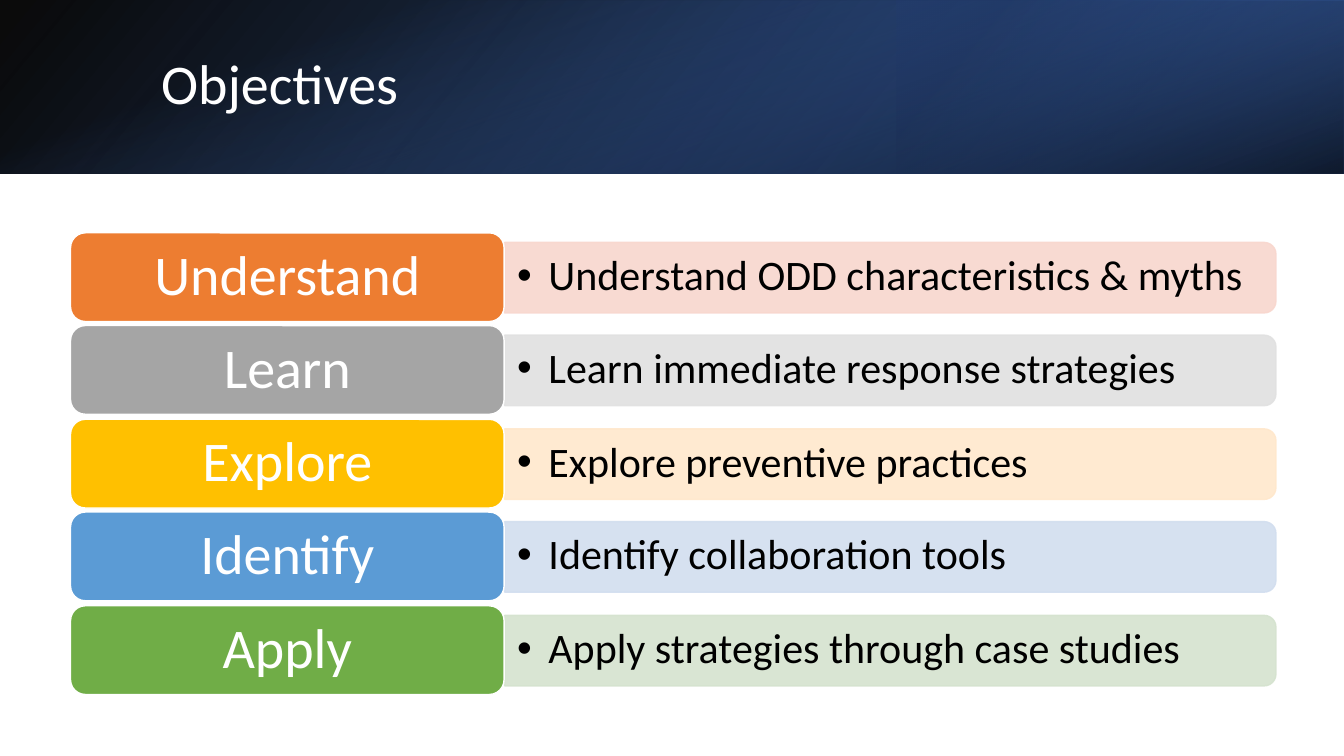
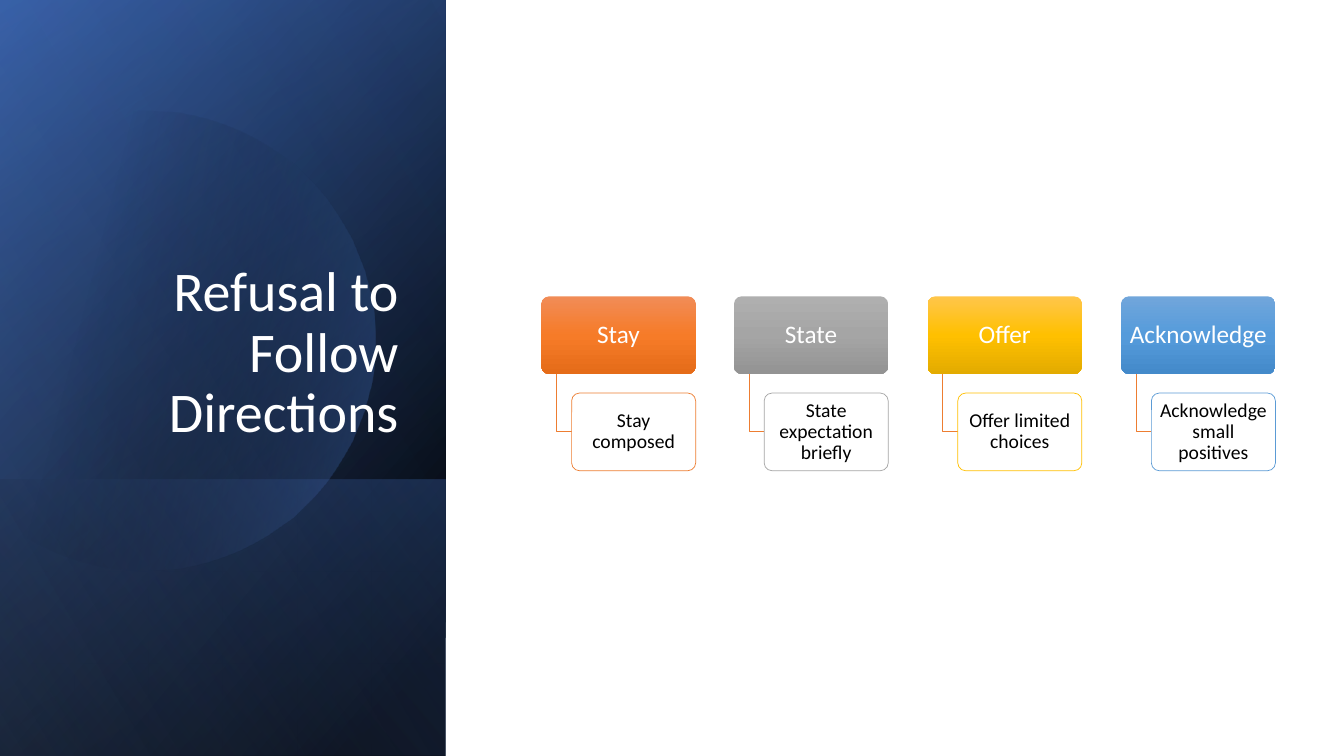
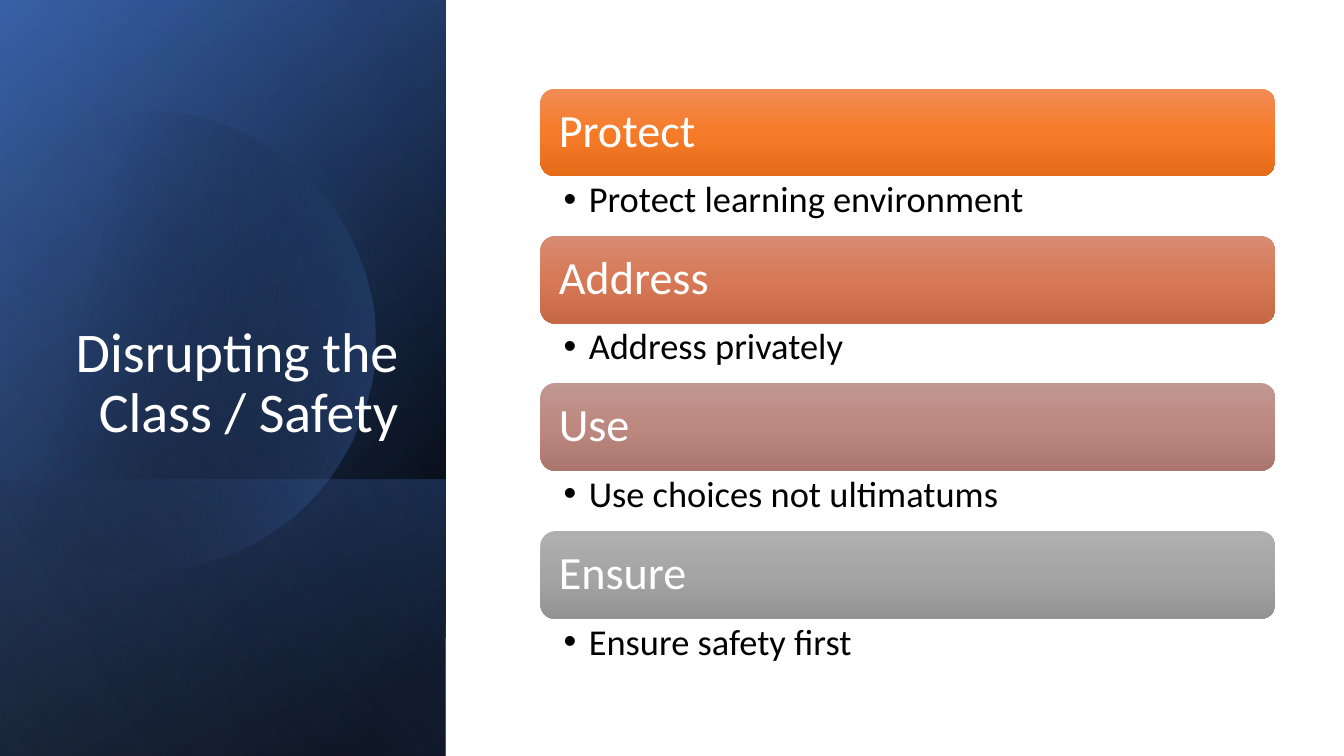
from math import cos, radians, sin

from lxml.etree import SubElement
from pptx import Presentation
from pptx.dml.color import RGBColor
from pptx.enum.shapes import MSO_SHAPE
from pptx.enum.text import MSO_ANCHOR, PP_ALIGN
from pptx.oxml import parse_xml
from pptx.oxml.ns import nsdecls, qn
from pptx.util import Emu, Pt

SCALE = 9144  # EMU in one px, 100 px to the inch
WIDTH, HEIGHT = 1333, 750
BANNER = 172
PANEL = 442

COLORS = {
    "white": "FFFFFF", "black": "000000",
    "navy": "203864", "deep_blue": "2F5597", "royal": "4472C4", "pale_blue": "8FAADC",
    "orange": "ED7D31", "gray": "A5A5A5", "yellow": "FFC000", "blue": "5B9BD5",
    "green": "70AD47",
    "orange_tint": "F8D7CE", "gray_tint": "E1E1E1", "yellow_tint": "FFE8CC",
    "blue_tint": "D2DEEF", "green_tint": "D5E3CF",
    "orange_top": "F18C57", "orange_middle": "F67B28", "orange_bottom": "E56C19",
    "gray_top": "AFAFAF", "gray_middle": "A5A5A5", "gray_bottom": "939393",
    "yellow_top": "FFC64B", "yellow_middle": "FFC000", "yellow_bottom": "E3AB00",
    "blue_top": "71A6DB", "blue_middle": "559BDB", "blue_bottom": "448ACA",
    "copper_top": "D78B72", "copper_middle": "D77956", "copper_bottom": "C66846",
    "rose_top": "C19791", "rose_middle": "BC8880", "rose_bottom": "AA766E",
}

# Each layer: box, rotation, flipped, gradient stops (position, colour, opacity), angle
BANNER_LAYERS = [
    ((0, 0, WIDTH, BANNER), 0, True, [(0, "black", 96), (100, "deep_blue", 100)], 140),
    ((889, 0, 444, BANNER), 180, True, [(19, "navy", 68), (100, "royal", 79)], 320),
    ((580, -580, BANNER, WIDTH), 90, False, [(23, "royal", 0), (99, "black", 74)], 340),
]
PANEL_BOX = (-154, 154, HEIGHT, PANEL)
PANEL_LAYERS = [
    (PANEL_BOX, 90, True, [(8, "black", 100), (100, "deep_blue", 100)], 50),
    (PANEL_BOX, 90, True, [(0, "black", 0), (99, "royal", 46)], 30),
    ((84, 392, 274, PANEL), 90, True, [(2, "royal", 29), (100, "black", 30)], 130),
]
PANEL_GLAZE = (PANEL_BOX, 90, True, [(0, "black", 0), (99, "pale_blue", 11)], 120)

OBJECTIVES = [
    ("Understand", "Understand ODD characteristics & myths", "orange"),
    ("Learn", "Learn immediate response strategies", "gray"),
    ("Explore", "Explore preventive practices", "yellow"),
    ("Identify", "Identify collaboration tools", "blue"),
    ("Apply", "Apply strategies through case studies", "green"),
]
REFUSAL_STEPS = [
    ("Stay", "Stay composed", "orange"),
    ("State", "State expectation briefly", "gray"),
    ("Offer", "Offer limited choices", "yellow"),
    ("Acknowledge", "Acknowledge small positives", "blue"),
]
SAFETY_STEPS = [
    ("Protect", "Protect learning environment", "orange"),
    ("Address", "Address privately", "copper"),
    ("Use", "Use choices not ultimatums", "rose"),
    ("Ensure", "Ensure safety first", "gray"),
]


def px(length):
    return Emu(length * SCALE)


def rgb(name):
    return RGBColor.from_string(COLORS[name])


def spread(first, last, count):
    """Return count evenly spaced whole positions from first to last."""
    return [first + (last - first) * step // (count - 1) for step in range(count)]


def set_line(shape, color=None, width=1):
    if color is None:
        shape.line.fill.background()
    else:
        shape.line.color.rgb = rgb(color)
        shape.line.width = Pt(width)


def set_solid(shape, color):
    shape.fill.solid()
    shape.fill.fore_color.rgb = rgb(color)


def set_gradient(shape, stops, angle):
    marks = "".join(
        f'<a:gs pos="{position * 1000}"><a:srgbClr val="{COLORS[color]}">'
        f'<a:alpha val="{opacity * 1000}"/></a:srgbClr></a:gs>'
        for position, color, opacity in stops)
    gradient = parse_xml(
        f'<a:gradFill {nsdecls("a")} rotWithShape="1"><a:gsLst>{marks}</a:gsLst>'
        f'<a:lin ang="{angle * 60000}" scaled="0"/></a:gradFill>')
    shape.element.spPr.insert(2, gradient)


def set_gloss(shape, family):
    parts = zip((0, 50, 100), ("top", "middle", "bottom"))
    set_gradient(shape, [(place, f"{family}_{part}", 100) for place, part in parts], 90)


def fade(shape, opacity=90):
    """Make every colour set so far on the shape partly transparent."""
    for color in shape.element.spPr.iter(qn("a:srgbClr")):
        SubElement(color, qn("a:alpha")).set("val", str(opacity * 1000))


def add_preset(page, preset, box, rotation=0, corner=None):
    shape = page.shapes.add_shape(preset, *map(px, box))
    shape.shadow.inherit = False
    shape.rotation = rotation
    if corner is not None:
        shape.adjustments[0] = corner
    set_line(shape)
    return shape


def add_outline(page, points, closed):
    builder = page.shapes.build_freeform(*points[0], scale=SCALE)
    builder.add_line_segments(points[1:], close=closed)
    shape = builder.convert_to_shape()
    shape.shadow.inherit = False
    return shape


def write(shape, text, size, color="black", align=PP_ALIGN.LEFT,
          anchor=MSO_ANCHOR.MIDDLE, insets=(10, 5, 10, 5), hanging=None):
    """Fill the shape with one paragraph, bulleted when a hanging indent is given."""
    frame = shape.text_frame
    sides = ("margin_left", "margin_top", "margin_right", "margin_bottom")
    frame_format = {"word_wrap": True, "vertical_anchor": anchor,
                    **dict(zip(sides, map(px, insets)))}
    para = frame.paragraphs[0]
    if hanging:
        properties = para._p.get_or_add_pPr()
        properties.set("marL", str(px(hanging)))
        properties.set("indent", str(-px(hanging)))
        SubElement(properties, qn("a:buFont")).set("typeface", "Arial")
        SubElement(properties, qn("a:buChar")).set("char", "•")
    span = para.add_run()
    span.text = text
    span.font.color.rgb = rgb(color)
    for target, values in (
        (frame, frame_format),
        (para, {"alignment": align, "line_spacing": 0.9}),
        (span.font, {"name": "Calibri", "size": Pt(size)}),
    ):
        for name, value in values.items():
            setattr(target, name, value)


def add_text(page, box, text, size, **style):
    write(page.shapes.add_textbox(*map(px, box)), text, size, **style)


def add_layer(page, box, rotation, flipped, stops, angle):
    layer = add_preset(page, MSO_SHAPE.RECTANGLE, box, rotation)
    if flipped:
        layer.element.spPr.xfrm.set("flipH", "1")
    set_gradient(layer, stops, angle)


def add_disc(page):
    """Draw the soft disc of the side panel, cut off at its left."""
    points = [(round(144 + 228 * cos(radians(turn))), round(338 + 228 * sin(radians(turn))))
              for turn in range(-134, 135, 4)]
    disc = add_outline(page, points, closed=True)
    set_gradient(disc, [(29, "black", 0), (100, "royal", 43)], 14)
    set_line(disc)


def add_page(deck):
    return deck.slides.add_slide(deck.slide_layouts[6])


def add_banner_page(deck, title):
    page = add_page(deck)
    for layer in BANNER_LAYERS:
        add_layer(page, *layer)
    add_text(page, (150, 38, 1098, 96), title, 40, color="white")
    return page


def add_panel_page(deck, title):
    page = add_page(deck)
    for layer in PANEL_LAYERS:
        add_layer(page, *layer)
    add_disc(page)
    add_layer(page, *PANEL_GLAZE)
    add_text(page, (64, 184, 341, 262), title, 40, color="white",
             align=PP_ALIGN.RIGHT, anchor=MSO_ANCHOR.BOTTOM)
    return page


def add_objective(page, top, label, detail, color):
    length, thickness = 765, 70
    bar = add_preset(page, MSO_SHAPE.ROUND_2_SAME_RECTANGLE,
                     (848, top + 9 - (length - thickness) // 2, thickness, length), 90)
    set_solid(bar, f"{color}_tint")
    set_line(bar, f"{color}_tint")
    fade(bar)
    add_text(page, (501, top + 12, 761, 64), detail, 30,
             insets=(12, 6, 12, 6), hanging=31)
    tile = add_preset(page, MSO_SHAPE.ROUNDED_RECTANGLE, (70, top, 430, 88))
    set_solid(tile, color)
    set_line(tile, "white")
    write(tile, label, 40, "white", PP_ALIGN.CENTER, insets=(17, 8, 17, 8))


def add_step(page, left, label, detail, color):
    top, height = 294, 77
    tile = add_preset(page, MSO_SHAPE.ROUNDED_RECTANGLE, (left, top, 153, height), corner=0.1)
    set_gloss(tile, color)
    write(tile, label, 18, "white", PP_ALIGN.CENTER, insets=(4, 3, 4, 3))
    stem, bend = left + 15, top + 134
    elbow = add_outline(page, [(stem, top + height), (stem, bend), (stem + 15, bend)],
                        closed=False)
    elbow.fill.background()
    set_line(elbow, "orange", 0.5)
    card = add_preset(page, MSO_SHAPE.ROUNDED_RECTANGLE,
                      (left + 30, top + 96, 123, height), corner=0.1)
    set_solid(card, "white")
    fade(card)
    set_line(card, color, 0.5)
    write(card, detail, 14, align=PP_ALIGN.CENTER, insets=(3, 2, 3, 2))


def add_heading(page, top, label, detail, color):
    left, width, height = 536, 729, 87
    tile = add_preset(page, MSO_SHAPE.ROUNDED_RECTANGLE, (left, top, width, height))
    set_gloss(tile, color)
    write(tile, label, 33, "white", insets=(14, 14, 14, 14))
    add_text(page, (left, top + height, width, 60), detail, 26, anchor=MSO_ANCHOR.TOP,
             insets=(23, 5, 26, 5), hanging=25)


def add_series(page, draw, first, last, items):
    for position, item in zip(spread(first, last, len(items)), items):
        draw(page, position, *item)


def main():
    deck = Presentation()
    deck.slide_width, deck.slide_height = px(WIDTH), px(HEIGHT)
    add_series(add_banner_page(deck, "Objectives"), add_objective, 231, 601, OBJECTIVES)
    add_series(add_panel_page(deck, "Refusal to Follow Directions"),
               add_step, 537, 1112, REFUSAL_STEPS)
    add_series(add_panel_page(deck, "Disrupting the Class / Safety"),
               add_heading, 88, 527, SAFETY_STEPS)
    deck.save("out.pptx")


if __name__ == "__main__":
    main()
